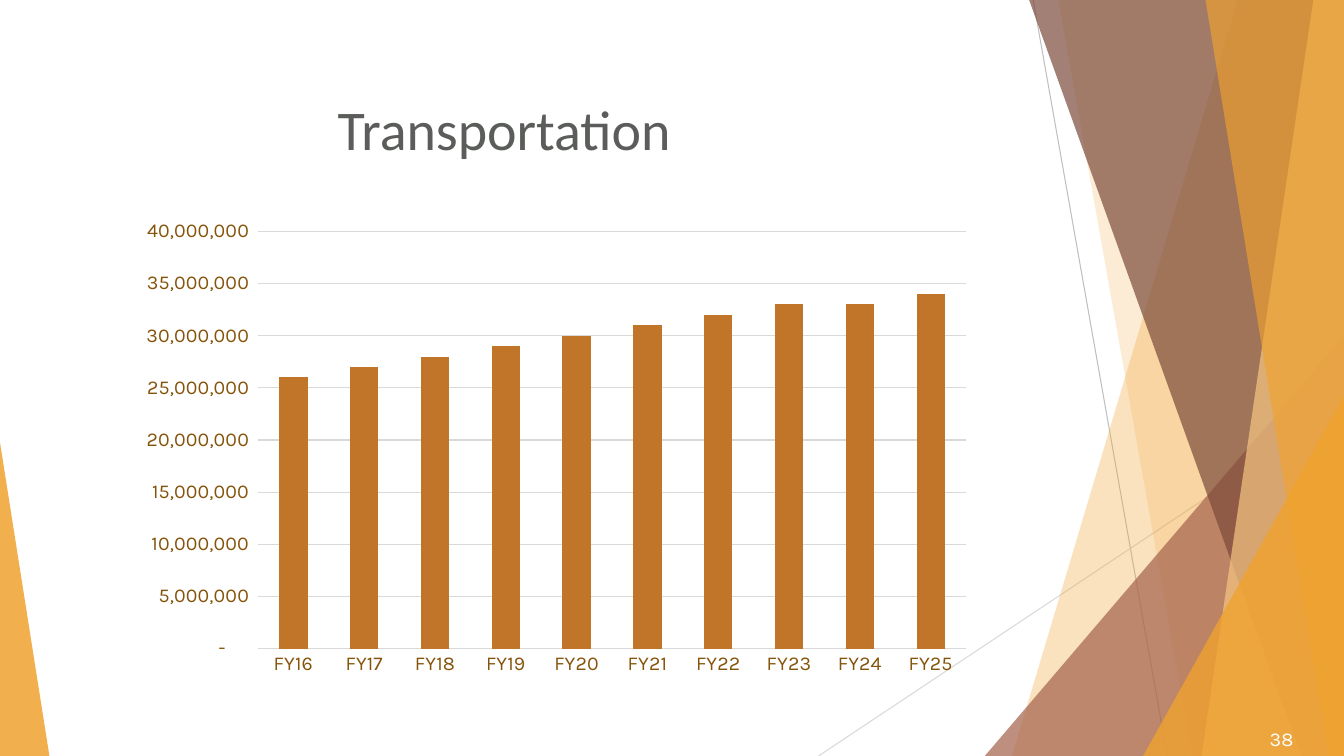
from dataclasses import dataclass

from lxml.etree import SubElement
from pptx import Presentation
from pptx.chart.data import CategoryChartData as ChartData
from pptx.dml.color import RGBColor as Rgb
from pptx.enum.chart import XL_CHART_TYPE as ChartType
from pptx.enum.chart import XL_TICK_MARK as TickMark
from pptx.enum.shapes import MSO_CONNECTOR as Connector
from pptx.enum.shapes import MSO_SHAPE as Shape
from pptx.enum.text import MSO_ANCHOR as Anchor
from pptx.enum.text import PP_ALIGN as Align
from pptx.oxml import parse_xml
from pptx.oxml.ns import nsdecls, qn
from pptx.util import Pt

WIDTH, HEIGHT = 960, 540
TITLE_ONLY = 5
COLORS = {
    "amber": "F0A22E",
    "pale amber": "F6C782",
    "rust": "A5644E",
    "brown": "7C4B3B",
    "bar": "C17529",
    "axis": "85540A",
    "title": "5A5D59",
    "white": "FFFFFF",
    "grey": "BFBFBF",
    "light grey": "D9D9D9",
}
YEARS = [f"FY{year}" for year in range(16, 26)]
MILLIONS = [26, 27, 28, 29, 30, 31, 32, 33, 33, 34]
NUMBER_FORMAT = r'_(* #,##0_);_(* \(#,##0\);_(* "-"??_);_(@_)'
PLOT_LAYOUT = {"x": 0.173, "y": 0.06, "w": 0.827, "h": 0.837}


@dataclass
class Ray:
    start: tuple[float, float]
    end: tuple[float, float]
    color: str


@dataclass
class Band:
    """A full-height strip at the right edge with a slanted left side."""
    top: float
    bottom: float
    color: str
    opacity: int


@dataclass
class Wedge:
    """A right triangle standing on the bottom edge; apex 0 is left, 1 is right."""
    left: float
    top: float
    width: float
    apex: int
    color: str
    opacity: int


RAYS = [
    Ray((738, 0), (833.76, HEIGHT), "grey"),
    Ray((WIDTH, 290.16), (584.64, HEIGHT), "light grey"),
]
FACETS = [
    Band(884.16, 722.88, "amber", 30),
    Band(756, 851.76, "amber", 20),
    Wedge(703.44, 239.76, 256.56, 1, "rust", 72),
    Band(735.12, 929.52, "brown", 70),
    Band(938.16, 858.24, "pale amber", 70),
    Band(861.12, 948.96, "amber", 65),
    Wedge(816.48, 282.96, 143.52, 1, "amber", 80),
    Wedge(0, 316.08, 35.28, 0, "amber", 85),
]


def rgb(name: str) -> Rgb:
    return Rgb.from_string(COLORS[name])


def set_all(target, **values) -> None:
    for name, value in values.items():
        setattr(target, name, value)


def style_font(font, family: str, size: float, color: str) -> None:
    set_all(font, name=family, size=Pt(size), bold=False)
    font.color.rgb = rgb(color)


def place(shape, left: float, top: float, width: float, height: float) -> None:
    set_all(shape, left=Pt(left), top=Pt(top), width=Pt(width), height=Pt(height))


def write(box, text: str, family: str, size: float, color: str,
          align: Align, anchor: Anchor) -> None:
    frame = box.text_frame
    set_all(frame, word_wrap=True, vertical_anchor=anchor)
    para = frame.paragraphs[0]
    para.alignment = align
    span = para.add_run()
    span.text = text
    style_font(span.font, family, size, color)


def draw_ray(page, ray: Ray) -> None:
    line = page.shapes.add_connector(
        Connector.STRAIGHT, *(Pt(value) for value in ray.start + ray.end))
    line.line.color.rgb = rgb(ray.color)
    line.line.width = Pt(0.75)
    SubElement(line._element.spPr, qn("a:effectLst"))


def draw_facet(page, facet: Band | Wedge) -> None:
    if isinstance(facet, Band):
        builder = page.shapes.build_freeform(Pt(facet.top), 0)
        corners = [(WIDTH, 0), (WIDTH, HEIGHT), (facet.bottom, HEIGHT)]
        builder.add_line_segments([(Pt(x), Pt(y)) for x, y in corners], close=True)
        shape = builder.convert_to_shape()
    else:
        shape = page.shapes.add_shape(
            Shape.ISOSCELES_TRIANGLE, Pt(facet.left), Pt(facet.top),
            Pt(facet.width), Pt(HEIGHT - facet.top))
        shape.adjustments[0] = facet.apex
    shape.shadow.inherit = False
    shape.line.fill.background()
    shape.fill.solid()
    shape.fill.fore_color.rgb = rgb(facet.color)
    color = next(shape._element.spPr.iter(qn("a:srgbClr")))
    SubElement(color, qn("a:alpha"), val=str(facet.opacity * 1000))


def fix_plot_area(chart) -> None:
    """Pin the inner plot area to its share of the chart frame."""
    area = chart._chartSpace.chart.plotArea
    for layout in area.findall(qn("c:layout")):
        area.remove(layout)
    sizes = "".join(f'<c:{key} val="{value}"/>' for key, value in PLOT_LAYOUT.items())
    area.insert(0, parse_xml(
        f'<c:layout {nsdecls("c")}><c:manualLayout><c:layoutTarget val="inner"/>'
        f'<c:xMode val="edge"/><c:yMode val="edge"/>{sizes}'
        '</c:manualLayout></c:layout>'))


def draw_chart(page) -> None:
    data = ChartData()
    data.categories = YEARS
    data.add_series("Transportation", [value * 1_000_000 for value in MILLIONS])
    chart = page.shapes.add_chart(
        ChartType.COLUMN_CLUSTERED, Pt(78.48), Pt(144), Pt(612), Pt(356), data).chart
    set_all(chart, has_legend=False, has_title=False)
    style_font(chart.font, "Karla", 14, "axis")

    for axis in (chart.category_axis, chart.value_axis):
        set_all(axis, major_tick_mark=TickMark.NONE, minor_tick_mark=TickMark.NONE)
        axis.format.line.fill.background()
        style_font(axis.tick_labels.font, "Karla", 14, "axis")
    values = chart.value_axis
    set_all(values, minimum_scale=0, maximum_scale=40_000_000, major_unit=5_000_000)
    set_all(values.tick_labels, number_format=NUMBER_FORMAT,
            number_format_is_linked=False)
    grid = values.major_gridlines.format.line
    grid.color.rgb = rgb("light grey")
    grid.width = Pt(0.75)

    plot = chart.plots[0]
    set_all(plot, gap_width=150, vary_by_categories=False)
    fill = plot.series[0].format.fill
    fill.solid()
    fill.fore_color.rgb = rgb("bar")
    fix_plot_area(chart)


def main() -> None:
    deck = Presentation()
    set_all(deck, slide_width=Pt(WIDTH), slide_height=Pt(HEIGHT))
    page = deck.slides.add_slide(deck.slide_layouts[TITLE_ONLY])
    for ray in RAYS:
        draw_ray(page, ray)
    for facet in FACETS:
        draw_facet(page, facet)

    title = page.shapes.title
    place(title, 234, 28.8, 590.4, 90)
    write(title, "Transportation", "Calibri", 40, "title", Align.LEFT, Anchor.BOTTOM)
    number = page.shapes.add_textbox(Pt(866.16), Pt(516), Pt(64.8), Pt(23.5))
    write(number, "38", "Karla", 14, "white", Align.RIGHT, Anchor.MIDDLE)
    draw_chart(page)
    deck.save("out.pptx")


if __name__ == "__main__":
    main()
